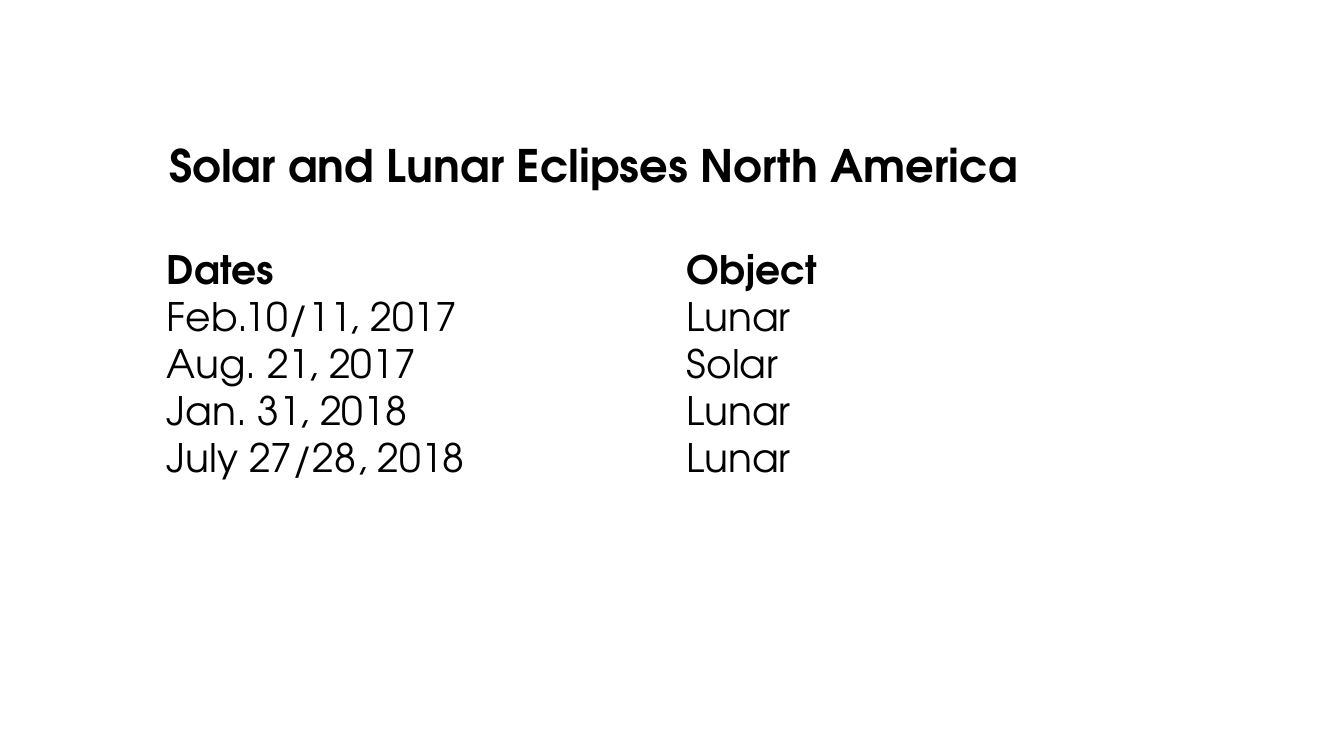
from pptx import Presentation
from pptx.dml.color import RGBColor
from pptx.enum.text import MSO_ANCHOR
from pptx.util import Pt

MIDDLE = MSO_ANCHOR.MIDDLE
FONT = "TeX Gyre Adventor"
COLORS = {"text": "000000", "background": "FFFFFF"}
ECLIPSES = [
    ("Dates", "Object"),
    ("Feb.10/11, 2017", "Lunar"),
    ("Aug. 21, 2017", "Solar"),
    ("Jan. 31, 2018", "Lunar"),
    ("July 27/28, 2018", "Lunar"),
]


def set_text(tf, text, size, bold):
    tf.text = text
    font = tf.paragraphs[0].runs[0].font
    font.name = FONT
    font.size = Pt(size)
    font.bold = bold
    font.color.rgb = RGBColor.from_string(COLORS["text"])


def add_title(slide, left, top, width, height):
    sp = slide.shapes.add_textbox(Pt(left), Pt(top), Pt(width), Pt(height))
    tf = sp.text_frame
    tf.word_wrap = True
    tf.vertical_anchor = MIDDLE
    set_text(tf, "Solar and Lunar Eclipses North America", 32, True)


def add_eclipse_table(slide, left, top, col_widths, row_height):
    rows = len(ECLIPSES)
    frame = slide.shapes.add_table(rows, len(col_widths), Pt(left), Pt(top),
                                   Pt(sum(col_widths)), Pt(rows * row_height))
    table = frame.table
    table.horz_banding = False
    for column, width in zip(table.columns, col_widths):
        column.width = Pt(width)
    for i, row in enumerate(ECLIPSES):
        for j, text in enumerate(row):
            cell = table.cell(i, j)
            cell.fill.background()
            cell.vertical_anchor = MIDDLE
            cell.margin_left = cell.margin_right = Pt(5.4)
            cell.margin_top = cell.margin_bottom = 0
            set_text(cell.text_frame, text, 28, i == 0)


def main():
    prs = Presentation()
    prs.slide_width, prs.slide_height = Pt(960), Pt(540)
    slide = prs.slides.add_slide(prs.slide_layouts[6])
    fill = slide.background.fill
    fill.solid()
    fill.fore_color.rgb = RGBColor.from_string(COLORS["background"])

    # Title
    add_title(slide, 113.8, 94.3, 635.8, 46)
    # Dates and objects of the eclipses
    add_eclipse_table(slide, 113.8, 178.6, (371.5, 270), 33.2)

    prs.save("out.pptx")


if __name__ == "__main__":
    main()
